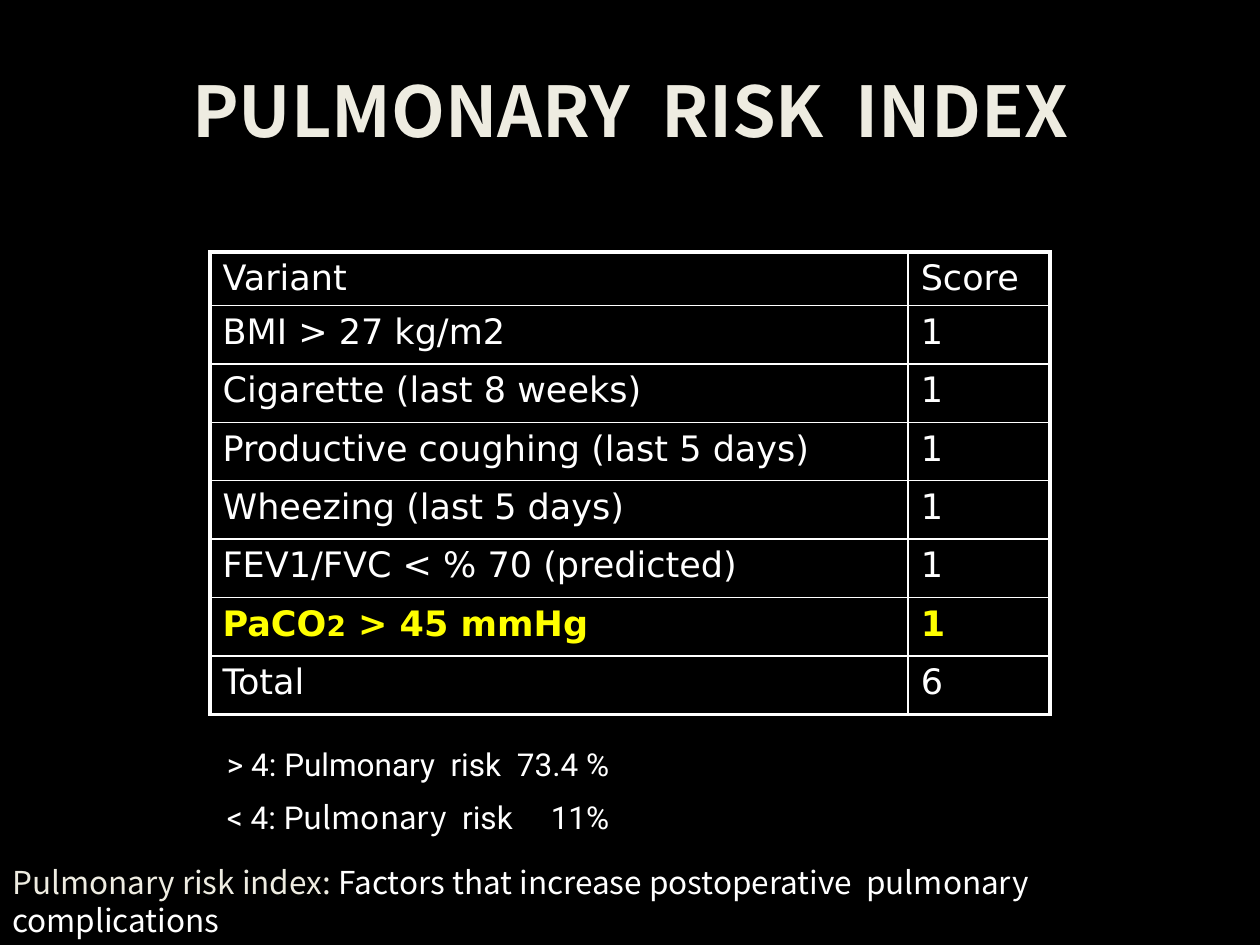
import pptx
import pptx.dml.color
import pptx.enum.text
import pptx.oxml
import pptx.util
from lxml import etree

Pt = pptx.util.Pt
DRAWING_NS = "http://schemas.openxmlformats.org/drawingml/2006/main"
WHITE, CREAM, YELLOW, BLACK = "FFFFFF", "EEECE1", "FFFF00", "000000"
HEADING_FONT, BODY_FONT, TABLE_FONT = "Noto Sans CJK KR", "Roboto", "DejaVu Sans"


def rgb(hex_color):
    return pptx.dml.color.RGBColor.from_string(hex_color)


def set_font(font, name, size, color, bold=False):
    font.name, font.size, font.bold = name, Pt(size), bold
    font.color.rgb = rgb(color)


deck = pptx.Presentation()
deck.slide_width, deck.slide_height = Pt(720), Pt(540)
slide = deck.slides.add_slide(deck.slide_layouts[5])
slide.background.fill.solid()
slide.background.fill.fore_color.rgb = rgb(BLACK)

# Title
title = slide.shapes.title
title.left, title.top, title.width, title.height = Pt(45), Pt(24), Pt(630), Pt(66)
title.text_frame.text = "PULMONARY  RISK  INDEX"
title.text_frame.vertical_anchor = pptx.enum.text.MSO_ANCHOR.BOTTOM
title.text_frame.paragraphs[0].alignment = pptx.enum.text.PP_ALIGN.CENTER
set_font(title.text_frame.paragraphs[0].font, HEADING_FONT, 40, CREAM, True)

# Risk factors: the subscript-like 2 is a smaller run
scores = [
    (["Variant"], "Score"),
    (["BMI > 27 kg/m2"], "1"),
    (["Cigarette (last 8 weeks)"], "1"),
    (["Productive coughing (last 5 days)"], "1"),
    (["Wheezing (last 5 days)"], "1"),
    (["FEV1/FVC < % 70 (predicted)"], "1"),
    (["PaCO", "2", " > 45 mmHg"], "1"),
    (["Total"], "6"),
]
highlighted_row = 6
last_row = len(scores) - 1
risk_table = slide.shapes.add_table(
    len(scores), 2, Pt(120), Pt(144), Pt(480), Pt(265)).table
risk_table.columns[0].width, risk_table.columns[1].width = Pt(399), Pt(81)

for row, (variant, score) in enumerate(scores):
    risk_table.rows[row].height = Pt(30.5 if row == 0 else 33.4)
    for column, pieces in enumerate((variant, [score])):
        cell = risk_table.cell(row, column)
        paragraph = cell.text_frame.paragraphs[0]
        highlighted = row == highlighted_row
        for piece in pieces:
            run = paragraph.add_run()
            run.text = piece
            set_font(run.font, TABLE_FONT, 16 if piece == "2" else 20,
                     YELLOW if highlighted else WHITE, highlighted)

        # Thick outer frame, thin inner grid
        outer_edges = {"lnL": column == 0, "lnR": column == 1,
                       "lnT": row == 0, "lnB": row == last_row}
        properties = cell._tc.get_or_add_tcPr()
        for edge, is_outer in outer_edges.items():
            width = Pt(2.25 if is_outer else 1)
            properties.append(pptx.oxml.parse_xml(
                f'<a:{edge} xmlns:a="{DRAWING_NS}" w="{width}"><a:solidFill>'
                f'<a:srgbClr val="{WHITE}"/></a:solidFill></a:{edge}>'))
        cell.fill.background()

# Risk by score, percentages right-aligned on a tab stop
risk_levels = slide.shapes.add_textbox(Pt(118), Pt(422), Pt(512), Pt(62)).text_frame
risk_levels.word_wrap = True
risk_levels.margin_left = Pt(11.7)
levels = [
    [("> 4: Pulmonary  risk\t73.4 %", BODY_FONT)],
    [("< 4: P", BODY_FONT), ("ulmonary", HEADING_FONT), ("  risk\t11%", BODY_FONT)],
]
for index, pieces in enumerate(levels):
    paragraph = risk_levels.paragraphs[0] if index == 0 else risk_levels.add_paragraph()
    paragraph.space_before = Pt(9 if index else 0)
    tab_stops = etree.SubElement(
        paragraph._p.get_or_add_pPr(), f"{{{DRAWING_NS}}}tabLst")
    etree.SubElement(tab_stops, f"{{{DRAWING_NS}}}tab", pos=str(Pt(218.5)), algn="r")
    for text, font_name in pieces:
        run = paragraph.add_run()
        run.text = text
        set_font(run.font, font_name, 18, WHITE)

# Definition
definition = slide.shapes.add_textbox(Pt(0), Pt(489.6), Pt(708.5), Pt(50)).text_frame
definition.word_wrap = True
for text, color in [
    ("Pulmonary risk index:", CREAM),
    (" Factors that increase postoperative  pulmonary  complications", WHITE),
]:
    run = definition.paragraphs[0].add_run()
    run.text = text
    set_font(run.font, HEADING_FONT, 18, color)

deck.save("out.pptx")
